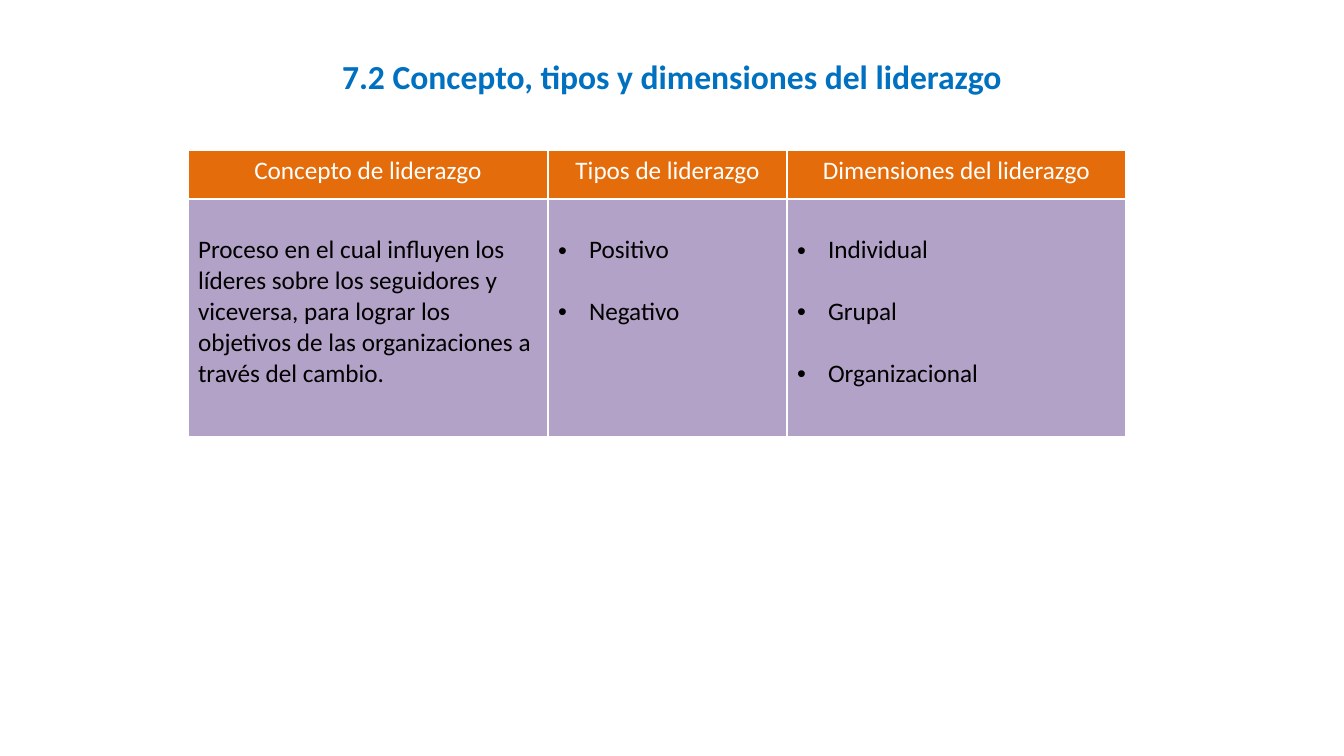
import pptx
import pptx.util
import pptx.dml.color
import pptx.enum.text
import pptx.oxml
import pptx.oxml.ns

# Content
TITLE = "7.2 Concepto, tipos y dimensiones del liderazgo"
COLUMNS = [
    {"header": "Concepto de liderazgo", "width": 360, "bullets": False,
     "lines": ["Proceso en el cual influyen los líderes sobre los seguidores y "
               "viceversa, para lograr los objetivos de las organizaciones a "
               "través del cambio."]},
    {"header": "Tipos de liderazgo", "width": 239, "bullets": True,
     "lines": ["Positivo", "Negativo"]},
    {"header": "Dimensiones del liderazgo", "width": 339, "bullets": True,
     "lines": ["Individual", "Grupal", "Organizacional"]},
]
ROW_HEIGHTS = [49, 238]
TABLE_LEFT, TABLE_TOP = 188, 150
BULLET_INDENT = 31
BODY_TOP_MARGIN = 36
CENTER = pptx.enum.text.PP_ALIGN.CENTER
TOP = pptx.enum.text.MSO_ANCHOR.TOP


def px(length):
    return pptx.util.Emu(round(length * 914400 / 100.8))


def color(value):
    return pptx.dml.color.RGBColor.from_string(value)


def style(paragraph, size, value, bold=False):
    font = paragraph.font
    font.name = "Calibri"
    font.size = pptx.util.Pt(size)
    font.bold = bold
    font.color.rgb = color(value)


def add_bullet(paragraph):
    properties = paragraph._p.get_or_add_pPr()
    properties.set("marL", str(px(BULLET_INDENT)))
    properties.set("indent", str(-px(BULLET_INDENT)))
    namespace = pptx.oxml.ns.nsdecls("a")
    for tag in ('buFont typeface="Arial"', 'buChar char="•"'):
        properties.append(pptx.oxml.parse_xml(f"<a:{tag} {namespace}/>"))


def format_cell(cell, fill):
    cell.fill.solid()
    cell.fill.fore_color.rgb = color(fill)
    cell.vertical_anchor = TOP
    # Thin white borders, placed before the fill
    for position, side in enumerate("LRTB"):
        border = pptx.oxml.parse_xml(
            f'<a:ln{side} {pptx.oxml.ns.nsdecls("a")} w="12700"><a:solidFill>'
            f'<a:srgbClr val="FFFFFF"/></a:solidFill></a:ln{side}>')
        cell._tc.get_or_add_tcPr().insert(position, border)


def main():
    presentation = pptx.Presentation()
    presentation.slide_width, presentation.slide_height = px(1344), px(756)
    slide = presentation.slides.add_slide(presentation.slide_layouts[5])

    # Title
    title = slide.shapes.title
    title.left, title.top, title.width, title.height = px(219), px(51), px(906), px(89)
    title.text_frame.text = TITLE
    title.text_frame.vertical_anchor = TOP
    title.text_frame.paragraphs[0].alignment = CENTER
    style(title.text_frame.paragraphs[0], 24, "0070C0", bold=True)

    # Table
    total_width = sum(column["width"] for column in COLUMNS)
    table = slide.shapes.add_table(
        len(ROW_HEIGHTS), len(COLUMNS), px(TABLE_LEFT), px(TABLE_TOP),
        px(total_width), px(sum(ROW_HEIGHTS))).table
    for row, height in zip(table.rows, ROW_HEIGHTS):
        row.height = px(height)

    for index, column in enumerate(COLUMNS):
        table.columns[index].width = px(column["width"])

        # Header cell
        header = table.cell(0, index)
        format_cell(header, "E46C0A")
        header.text_frame.text = column["header"]
        header.text_frame.paragraphs[0].alignment = CENTER
        style(header.text_frame.paragraphs[0], 18, "FFFFFF")

        # Body cell, one line of space between items
        body = table.cell(1, index)
        format_cell(body, "B3A2C7")
        body.margin_top = px(BODY_TOP_MARGIN)
        body.text_frame.text = "\n".join(column["lines"])
        for number, paragraph in enumerate(body.text_frame.paragraphs):
            if number:
                paragraph.space_before = pptx.util.Pt(22)
            if column["bullets"]:
                add_bullet(paragraph)
            style(paragraph, 18, "000000")

    presentation.save("out.pptx")


if __name__ == "__main__":
    main()
